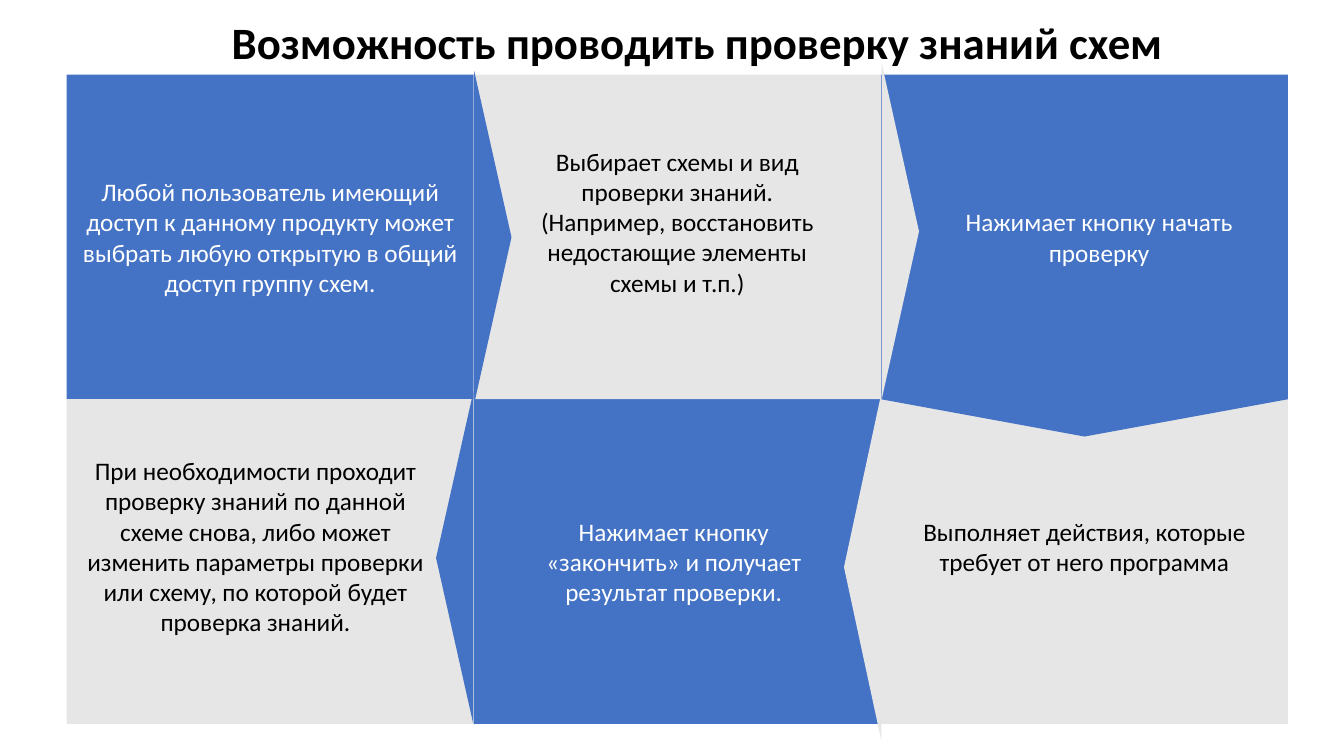
import pptx
import pptx.dml.color
import pptx.enum.shapes
import pptx.enum.text
import pptx.util

Cm = pptx.util.Cm
SHAPES = pptx.enum.shapes.MSO_SHAPE
BLUE, GREY, WHITE, BLACK = "4472C4", "E7E6E6", "FFFFFF", "000000"
LEFT, TOP, CELL_WIDTH, CELL_HEIGHT = 1.68, 1.88, 10.26, 8.18
TIP_HEIGHT = 0.94
NARROW, WIDE, EXTRA = 0.25, 0.99, 1.5
EDGE, RAISED = 0.13, 0.9


def color(value):
    return pptx.dml.color.RGBColor.from_string(value)


class ProcessSlide:
    font = "Calibri"
    title_size = 32
    body_size = 18

    def __init__(self, deck):
        self.slide = deck.slides.add_slide(deck.slide_layouts[6])

    def fill_text(self, frame, text, size, ink, align, bold=False):
        frame.text = text
        for para in frame.paragraphs:
            para.alignment = align
            for span in para.runs:
                span.font.name = self.font
                span.font.size = pptx.util.Pt(size)
                span.font.bold = bold
                span.font.color.rgb = color(ink)

    def title(self, text):
        box = self.slide.shapes.add_textbox(Cm(5.59), Cm(0.25), Cm(24.18), Cm(1.63))
        box.text_frame.word_wrap = False
        box.text_frame.auto_size = pptx.enum.text.MSO_AUTO_SIZE.SHAPE_TO_FIT_TEXT
        self.fill_text(box.text_frame, text, self.title_size, BLACK,
                       pptx.enum.text.PP_ALIGN.LEFT, bold=True)

    def shape(self, kind, left, top, width, height, fill):
        shape = self.slide.shapes.add_shape(kind, Cm(left), Cm(top), Cm(width), Cm(height))
        shape.shadow.inherit = False
        shape.fill.solid()
        shape.fill.fore_color.rgb = color(fill)
        shape.line.fill.background()
        return shape

    def step(self, column, row, fill, left_inset, right_inset, bottom_inset, text,
             width=CELL_WIDTH):
        box = self.shape(SHAPES.RECTANGLE, LEFT + column * CELL_WIDTH,
                         TOP + row * CELL_HEIGHT, width, CELL_HEIGHT, fill)
        frame = box.text_frame
        frame.word_wrap = True
        frame.vertical_anchor = pptx.enum.text.MSO_ANCHOR.MIDDLE
        frame.margin_left, frame.margin_right = Cm(left_inset), Cm(right_inset)
        frame.margin_top, frame.margin_bottom = Cm(EDGE), Cm(bottom_inset)
        self.fill_text(frame, text, self.body_size, WHITE if fill == BLUE else BLACK,
                       pptx.enum.text.PP_ALIGN.CENTER)

    def tip(self, center_x, center_y, base, rotation, fill):
        triangle = self.shape(SHAPES.ISOSCELES_TRIANGLE, center_x - base / 2,
                              center_y - TIP_HEIGHT / 2, base, TIP_HEIGHT, fill)
        triangle.rotation = rotation


def main():
    deck = pptx.Presentation()
    deck.slide_width, deck.slide_height = Cm(33.87), Cm(19.05)
    process = ProcessSlide(deck)
    process.title("Возможность проводить проверку знаний схем")

    process.step(0, 0, BLUE, NARROW, NARROW, EDGE,
                 "Любой пользователь имеющий доступ к данному продукту может "
                 "выбрать любую открытую в общий доступ группу схем.")
    process.step(2, 0, BLUE, WIDE, NARROW, EDGE, "Нажимает кнопку начать проверку")
    process.step(1, 1, BLUE, WIDE, EXTRA, EDGE,
                 "Нажимает кнопку «закончить» и получает результат проверки.", width=10.59)
    process.step(1, 0, GREY, WIDE, WIDE, RAISED,
                 "Выбирает схемы и вид проверки знаний.\n"
                 "(Например, восстановить недостающие элементы схемы и т.п.)")
    process.step(2, 1, GREY, NARROW, NARROW, RAISED,
                 "Выполняет действия, которые требует от него программа")
    process.step(0, 1, GREY, NARROW, WIDE, RAISED,
                 "При необходимости проходит проверку знаний по данной схеме снова, "
                 "либо может изменить параметры проверки или схему, по которой "
                 "будет проверка знаний.")

    for tip in (
        (12.42, 5.98, 8.38, 90, BLUE),
        (11.46, 14.06, 8.38, 270, BLUE),
        (27.33, 10.53, CELL_WIDTH, 180, BLUE),
        (22.69, 5.83, 8.46, 90, GREY),
        (21.74, 14.29, 8.74, 270, GREY),
    ):
        process.tip(*tip)

    deck.save("out.pptx")


if __name__ == "__main__":
    main()
